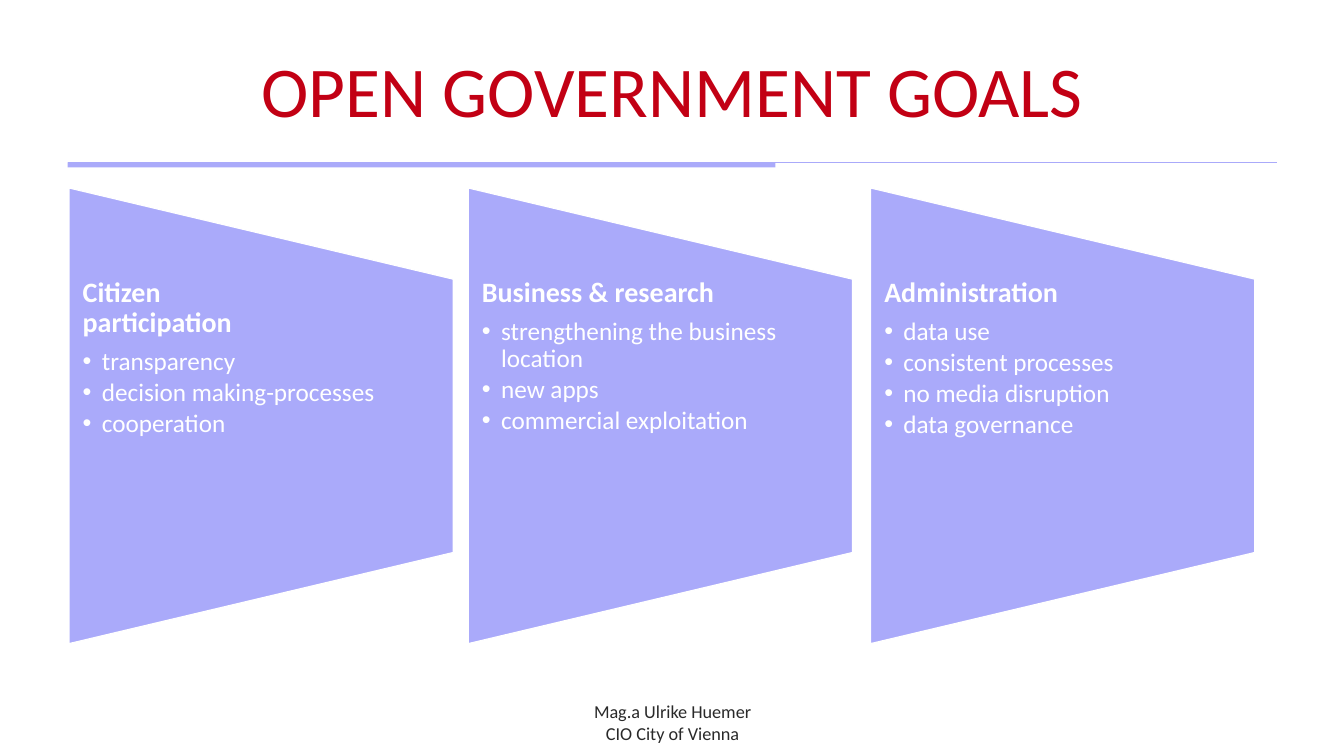
from lxml.etree import SubElement
from pptx import Presentation
from pptx.dml.color import RGBColor
from pptx.enum.shapes import MSO_CONNECTOR, MSO_SHAPE
from pptx.enum.text import MSO_ANCHOR, MSO_AUTO_SIZE, PP_ALIGN
from pptx.oxml.ns import qn
from pptx.util import Pt

PX = 9144  # EMU; 100 px to the inch
COLORS = {"title": "C20014", "accent": "AAAAFA", "light": "FFFFFF", "footer": "292929"}
FONT = "Calibri"
COLUMN_TOP, COLUMN_WIDTH, COLUMN_HEIGHT = 276, 381, 271
PANEL_LENGTH = 452
COLUMNS = [
    (68, "Citizen\vparticipation",
     ["transparency", "decision making-processes", "cooperation"]),
    (464, "Business & research",
     ["strengthening the business location", "new apps", "commercial exploitation"]),
    (863, "Administration",
     ["data use", "consistent processes", "no media disruption", "data governance"]),
]


def color(name):
    return RGBColor.from_string(COLORS[name])


def write(frame, text, *, size, ink, bold=False, align=PP_ALIGN.LEFT,
          spacing=1.0, after=0, indent=0, bullet=None):
    """Fill the empty first paragraph of the frame, or add one below."""
    para = frame.paragraphs[0]
    if para.text:
        para = frame.add_paragraph()
    para.text = text
    para.alignment = align
    para.line_spacing = spacing
    para.space_before, para.space_after = Pt(0), Pt(after)
    properties = para._p.get_or_add_pPr()
    properties.set("marL", str(indent * PX))
    properties.set("indent", str(-indent * PX))
    if bullet:
        SubElement(properties, qn("a:buChar")).set("char", bullet)
    else:
        SubElement(properties, qn("a:buNone"))
    for font in [para.font] + [span.font for span in para.runs]:
        font.name, font.size, font.bold = FONT, Pt(size), bold
        font.color.rgb = color(ink)


class SlideBuilder:
    def __init__(self, slide):
        self.slide = slide
        self.shapes = slide.shapes

    def place(self, box, left, top, width, height):
        box.left, box.top = left * PX, top * PX
        box.width, box.height = width * PX, height * PX

    def set_frame(self, box, anchor=MSO_ANCHOR.TOP, side=0, edge=0):
        frame = box.text_frame
        frame.word_wrap = True
        frame.auto_size = MSO_AUTO_SIZE.NONE
        frame.vertical_anchor = anchor
        frame.margin_left = frame.margin_right = side * PX
        frame.margin_top = frame.margin_bottom = edge * PX
        return frame

    def title(self, text):
        box = self.shapes.title
        self.place(box, 37, 36, 1260, 116)
        frame = self.set_frame(box, MSO_ANCHOR.MIDDLE, side=13, edge=7)
        write(frame, text, size=51, ink="title", align=PP_ALIGN.CENTER, spacing=0.9)

    def shape(self, kind, left, top, width, height, line="accent", weight=0.25):
        shape = self.shapes.add_shape(kind, 0, 0, 0, 0)
        self.place(shape, left, top, width, height)
        shape.shadow.inherit = False
        shape.fill.solid()
        shape.fill.fore_color.rgb = color("accent")
        shape.line.color.rgb = color(line)
        shape.line.width = Pt(weight)
        return shape

    def rule(self, left, top, right):
        line = self.shapes.add_connector(
            MSO_CONNECTOR.STRAIGHT, left * PX, top * PX, right * PX, top * PX)
        line.line.color.rgb = color("accent")
        line.line.width = Pt(0.25)
        SubElement(line._element.spPr, qn("a:effectLst"))

    def column(self, placeholder, left, heading, items):
        """Draw a sideways trapezoid with a heading and list on top of it."""
        offset = (PANEL_LENGTH - COLUMN_WIDTH) // 2
        middle = COLUMN_TOP + COLUMN_HEIGHT // 2
        panel = self.shape(MSO_SHAPE.FLOWCHART_MANUAL_OPERATION, left - offset,
                           middle - COLUMN_WIDTH // 2 + 1, PANEL_LENGTH, COLUMN_WIDTH,
                           line="light", weight=0.85)
        panel.rotation = 270
        panel._element.addnext(placeholder._element)
        self.place(placeholder, left, COLUMN_TOP, COLUMN_WIDTH, COLUMN_HEIGHT)
        frame = self.set_frame(placeholder, side=14)
        write(frame, heading, size=20, ink="light", bold=True, spacing=0.9, after=7)
        for item in items:
            write(frame, item, size=18, ink="light", spacing=0.9, after=2.7,
                  indent=19, bullet="•")

    def footer(self, lines):
        box = self.shapes.add_textbox(0, 0, 0, 0)
        self.place(box, 456, 695, 422, 40)
        frame = self.set_frame(box)
        for line in lines:
            write(frame, line, size=13, ink="footer", align=PP_ALIGN.CENTER)


def main():
    deck = Presentation()
    deck.slide_width, deck.slide_height = 1333 * PX, 750 * PX
    comparison_layout = deck.slide_layouts[4]
    page = SlideBuilder(deck.slides.add_slide(comparison_layout))
    bodies = list(page.slide.placeholders)[1:]

    page.title("OPEN GOVERNMENT GOALS")
    band = page.shape(MSO_SHAPE.RECTANGLE, 67, 161, 702, 5)
    band.line.fill.background()
    page.rule(67, 161, 1267)
    for body, column in zip(bodies, COLUMNS):
        page.column(body, *column)
    for spare in bodies[len(COLUMNS):]:
        spare._element.getparent().remove(spare._element)
    page.footer(["Mag.a Ulrike Huemer", "CIO City of Vienna"])
    deck.save("out.pptx")


if __name__ == "__main__":
    main()
